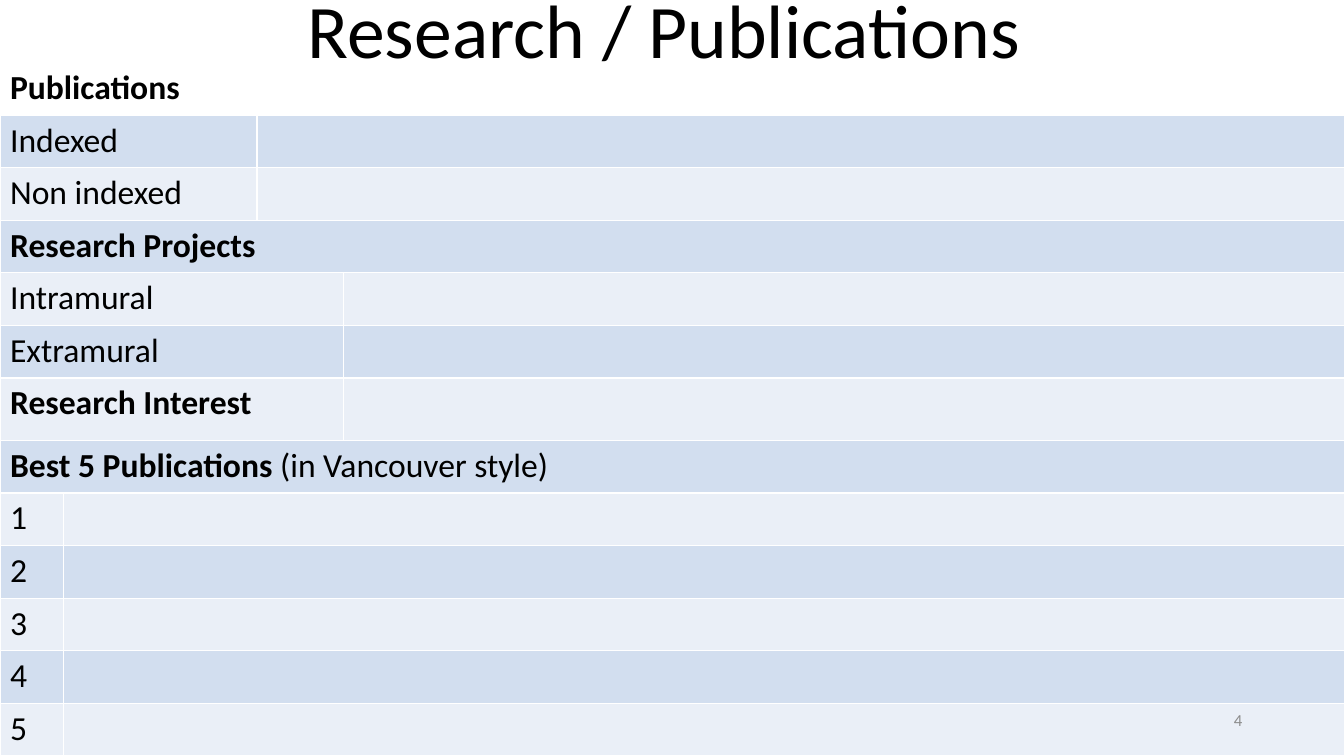
from pptx import Presentation, util as u
from pptx.dml.color import RGBColor
from pptx.enum import text

HUES = {"ink": "000000", "gray": "8C8C8C", "head": "FFFFFF",
        "dark": "D2DEEF", "light": "EAEFF7"}
COLS = [0.63, 1.92, 0.86, 9.93]
ROWS = [
    ("Publications", "", 4),
    ("", "Indexed", 2),
    ("", "Non indexed", 2),
    ("Research Projects", "", 4),
    ("", "Intramural", 3),
    ("", "Extramural", 3),
    ("Research Interest", "", 3),
    ("Best 5 Publications ", "(in Vancouver style)", 4),
] + [("", str(n), 1) for n in range(1, 6)]
TALL = 6


def style(run, size, hue="ink", bold=False):
    run.font.name = "Calibri"
    run.font.size = u.Pt(size)
    run.font.bold = bold
    run.font.color.rgb = RGBColor.from_string(HUES[hue])


def label(slide, box, words, size, hue, align):
    frame = slide.shapes.add_textbox(*map(u.Inches, box)).text_frame
    frame.word_wrap = True
    frame.vertical_anchor = text.MSO_ANCHOR.MIDDLE
    frame.text = words
    line = frame.paragraphs[0]
    line.alignment = align
    line.line_spacing = 0.9
    style(line.runs[0], size, hue)


def form(slide, box):
    table = slide.shapes.add_table(len(ROWS), len(COLS), *map(u.Inches, box)).table
    for col, width in zip(table.columns, COLS):
        col.width = u.Inches(width)
    high = 0.62
    step = (box[3] - high) / (len(ROWS) - 1)
    for i, (bold, plain, span) in enumerate(ROWS):
        table.rows[i].height = u.Inches(high if i == TALL else step)
        hue = "head" if i == 0 else "dark" if i % 2 else "light"
        for j in range(len(COLS)):
            fill = table.cell(i, j).fill
            fill.solid()
            fill.fore_color.rgb = RGBColor.from_string(HUES[hue])
        for start, end in ((0, span - 1), (span, len(COLS) - 1)):
            if start < end:
                table.cell(i, start).merge(table.cell(i, end))
        line = table.cell(i, 0).text_frame.paragraphs[0]
        for words, heavy in ((bold, True), (plain, False)):
            if words:
                run = line.add_run()
                run.text = words
                style(run, 24, bold=heavy)


def main():
    deck = Presentation()
    deck.slide_width, deck.slide_height = u.Inches(13.33), u.Inches(7.5)
    slide = deck.slides.add_slide(deck.slide_layouts[6])
    label(slide, (0.92, 0, 11.5, 0.67), "Research / Publications ", 54, "ink",
          text.PP_ALIGN.CENTER)
    form(slide, (0, 0.62, 13.33, 6.88))
    label(slide, (9.42, 6.95, 3, 0.4), "4", 12, "gray", text.PP_ALIGN.RIGHT)
    deck.save("out.pptx")


if __name__ == "__main__":
    main()
